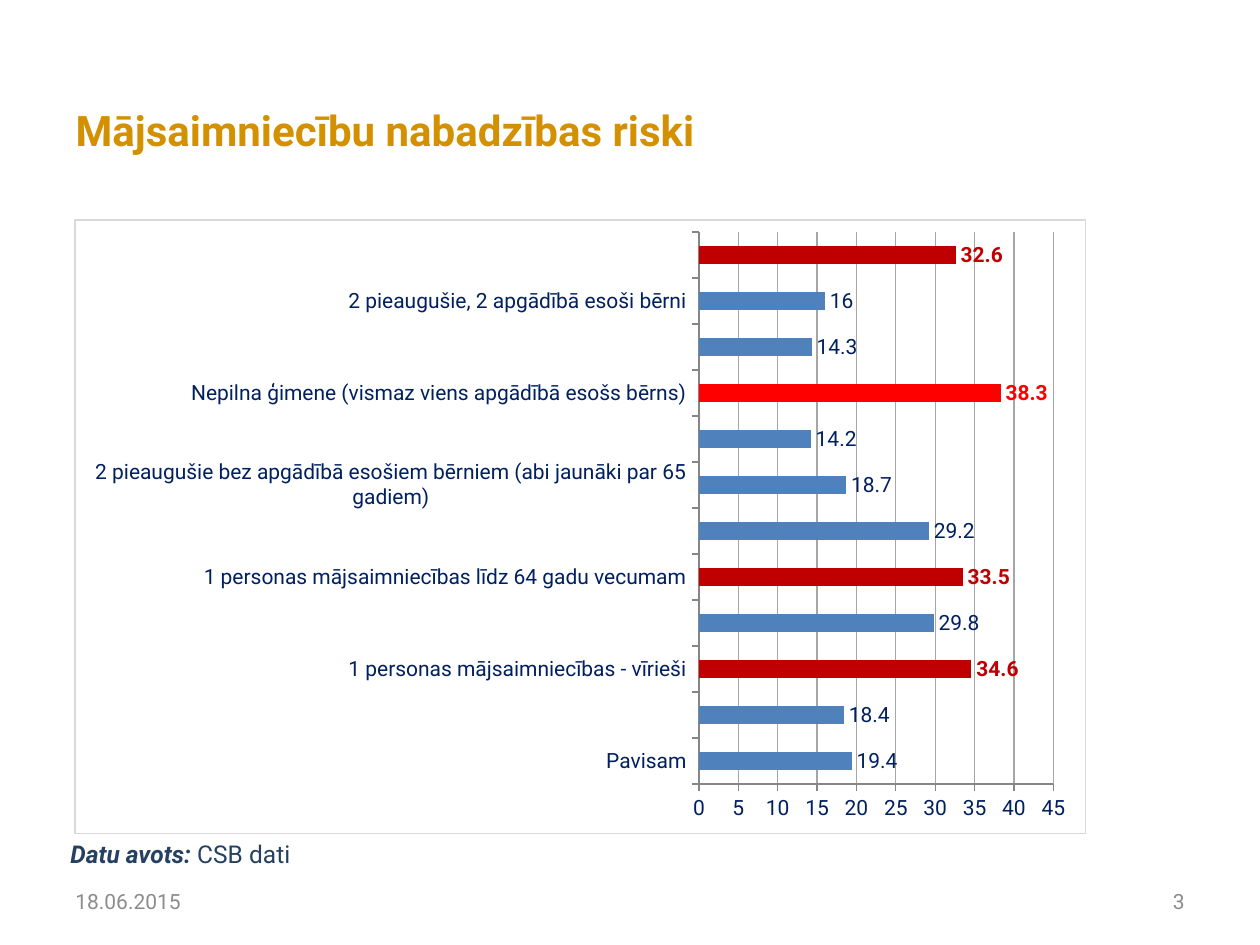
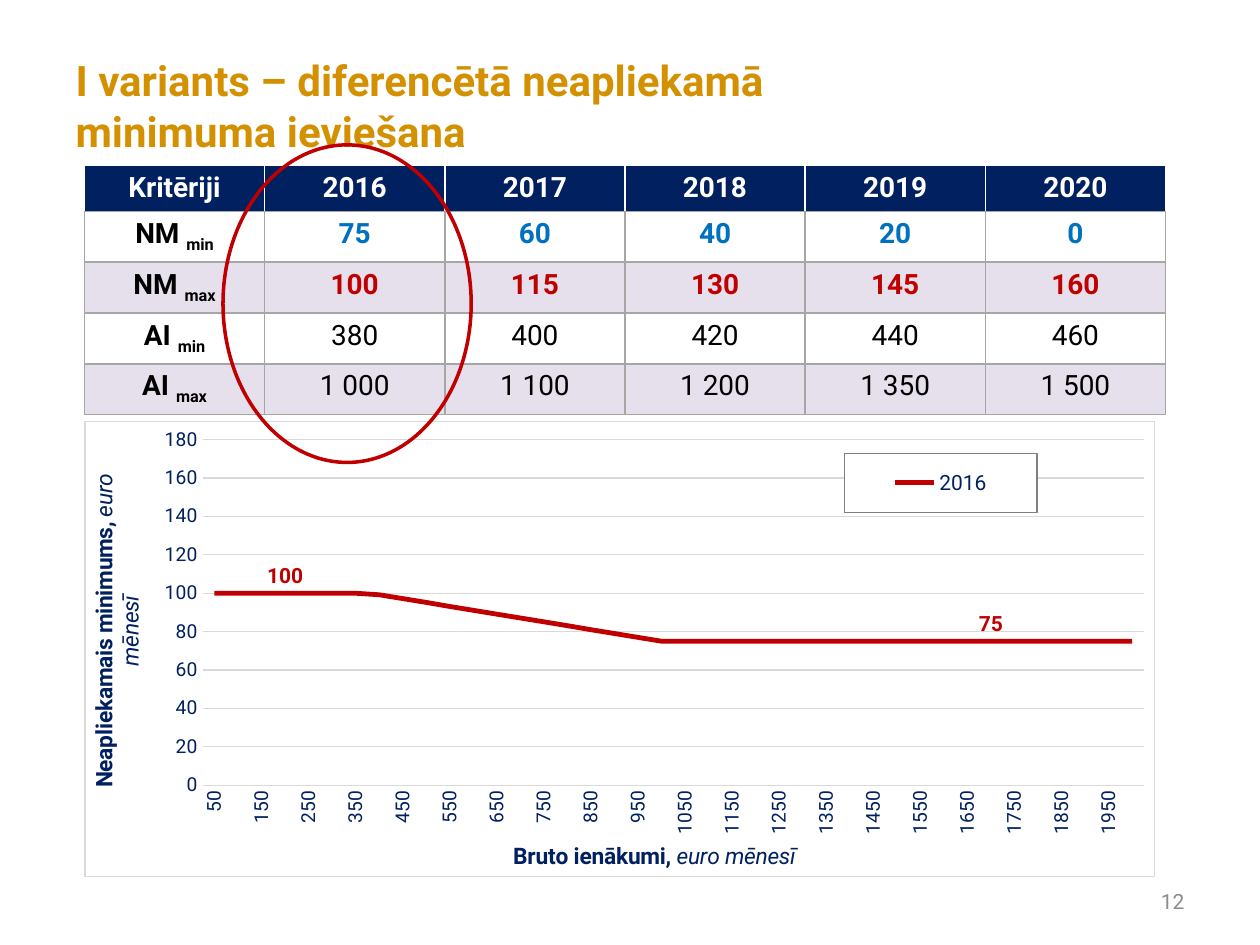
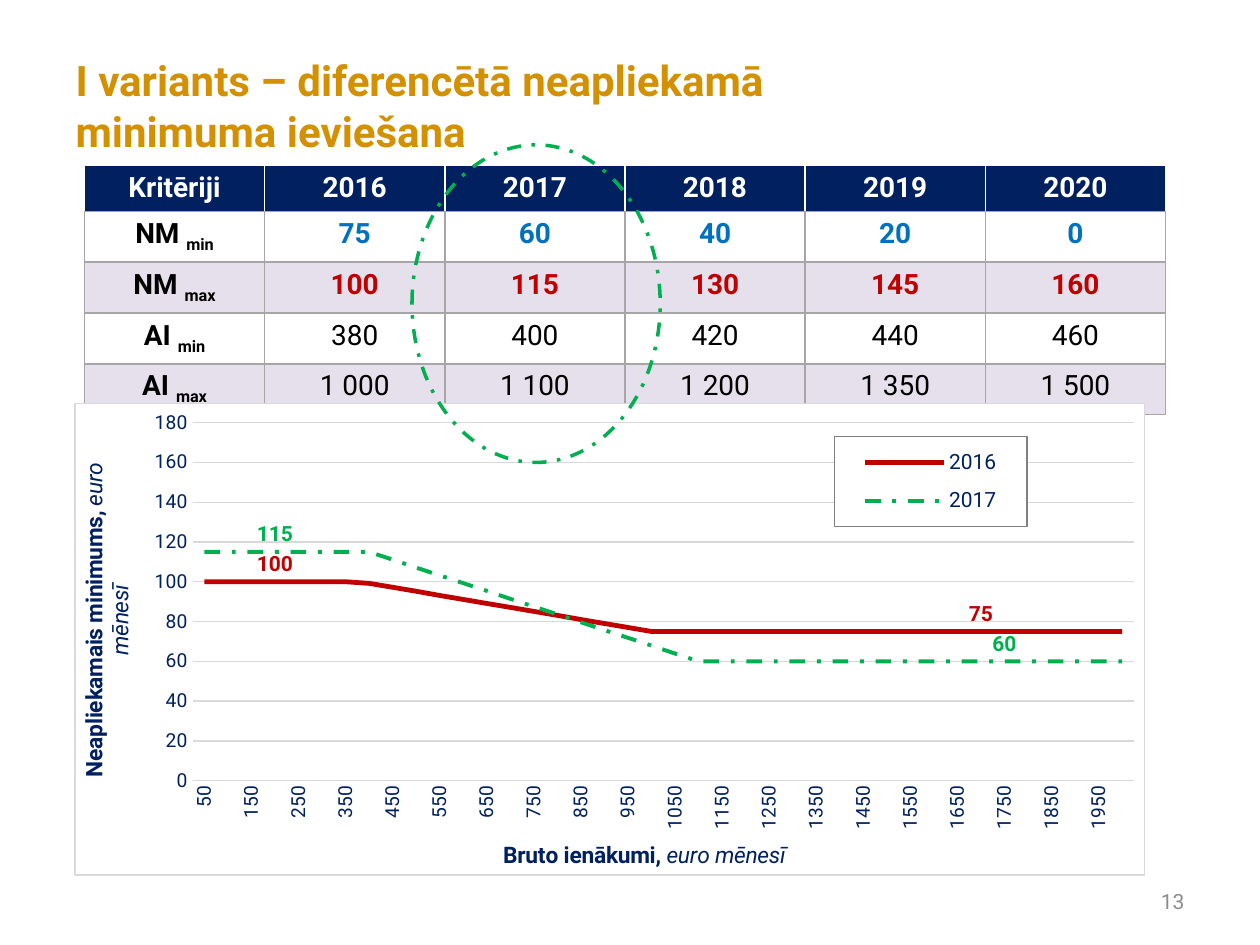
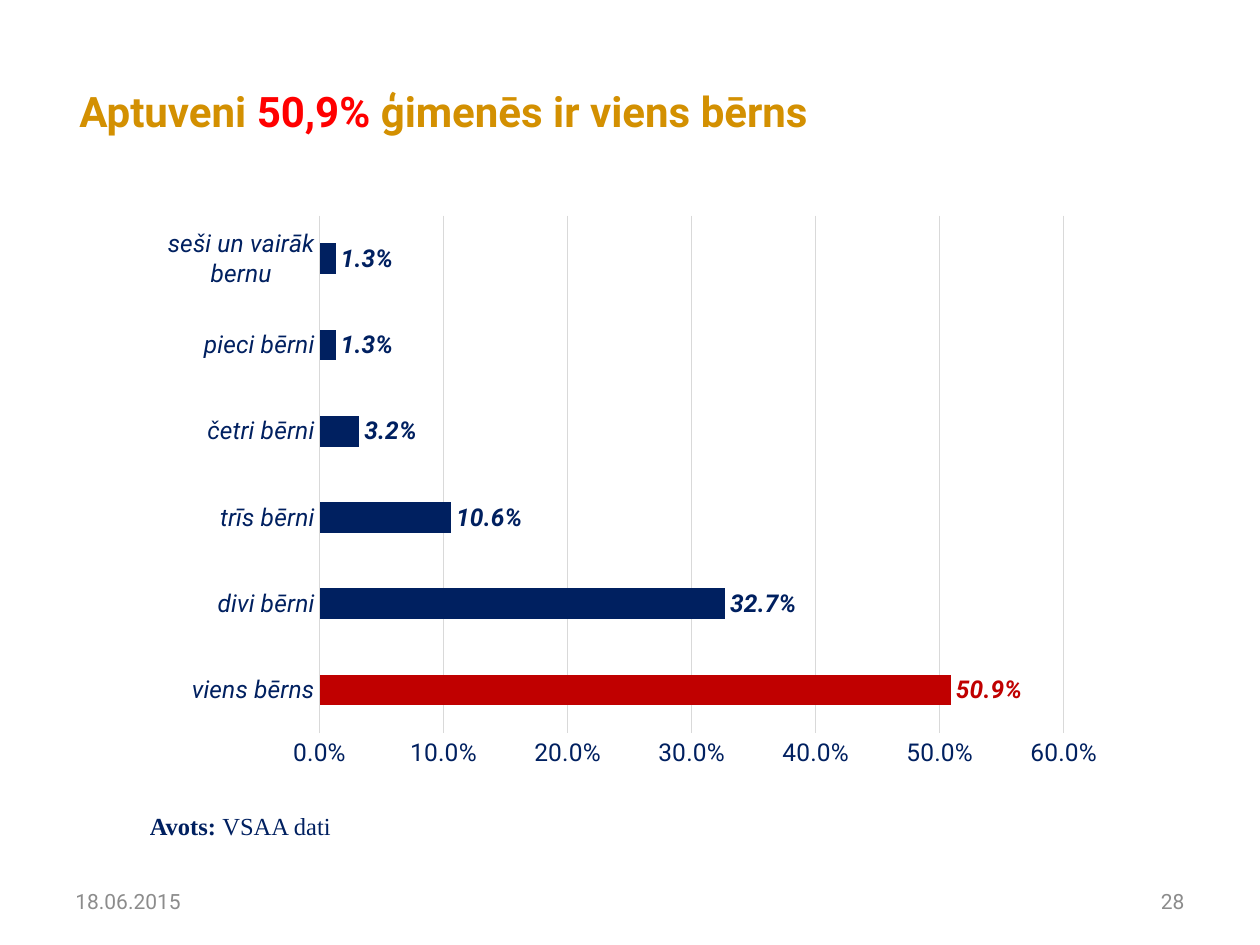
from dataclasses import dataclass, field
from typing import NamedTuple, Optional

from pptx import Presentation
from pptx.chart.data import CategoryChartData as ChartData
from pptx.dml.color import RGBColor
from pptx.enum.chart import XL_CHART_TYPE as Kind, XL_LABEL_POSITION as LabelAt
from pptx.enum.chart import XL_LEGEND_POSITION as LegendAt, XL_TICK_MARK as Tick
from pptx.enum.dml import MSO_LINE as Dash
from pptx.enum.shapes import MSO_SHAPE as Preset
from pptx.enum.text import MSO_ANCHOR as Anchor, MSO_AUTO_SIZE as AutoSize, PP_ALIGN as Align
from pptx.oxml import parse_xml
from pptx.oxml.ns import nsdecls, qn
from pptx.util import Pt


# Theme: colours, fonts and type sizes
@dataclass(frozen=True)
class Theme:
    font: str = "Roboto"
    serif: str = "Times New Roman"
    white: str = "FFFFFF"
    black: str = "000000"
    navy: str = "002060"
    gold: str = "D39001"
    red: str = "C00000"
    bright_red: str = "FF0000"
    green: str = "00B050"
    blue: str = "0070C0"
    bar_blue: str = "4F81BD"
    slate: str = "254061"
    lilac: str = "E6E0EC"
    footer_grey: str = "8C8C8C"
    axis_grey: str = "868686"
    rule_grey: str = "A6A6A6"
    grid_grey: str = "D9D9D9"
    legend_grey: str = "7F7F7F"
    title_size: float = 24
    table_size: float = 16
    source_size: float = 14
    axis_title_size: float = 13
    body_size: float = 12
    tick_size: float = 11


T = Theme()
HAIRLINE = 0.75


class Box(NamedTuple):
    left: float
    top: float
    width: float
    height: float

    def lengths(self) -> tuple:
        return tuple(Pt(value) for value in self)


class Part(NamedTuple):
    """A stretch of text and the format that sets it apart."""
    text: str
    style: dict


class Criterion(NamedTuple):
    name: str
    limit: str
    values: tuple
    color: str
    bold: bool


class Allowance(NamedTuple):
    """One year's rule: the allowance falls from top to bottom between two incomes."""
    year: str
    bottom: float
    top: float
    income_from: float
    income_to: float
    color: str
    width: float
    dash: Optional[Dash]
    labelled: tuple

    def at(self, income: float) -> float:
        share = (income - self.income_from) / (self.income_to - self.income_from)
        return round(self.top - (self.top - self.bottom) * min(max(share, 0), 1), 1)


@dataclass(frozen=True)
class BarChart:
    box: Box
    rows: tuple
    color: str
    highlights: dict
    gap: int
    size: float
    maximum: float
    unit: float
    number_format: str
    grid: str
    tick: Tick
    axis_line: str
    value_line: Optional[str] = None
    border: Optional[str] = None
    italic: bool = False
    label_style: dict = field(default_factory=dict)


# Text
def style_font(font, *, size=T.body_size, color=T.navy, bold=False, italic=False, name=T.font) -> None:
    font.name, font.size = name, Pt(size)
    font.bold, font.italic = bold, italic
    font.color.rgb = RGBColor.from_string(color)


def write(paragraph, text: str, *, align=None, baseline: int = 0, **style) -> None:
    run = paragraph.add_run()
    run.text = text
    style_font(run.font, **style)
    if baseline:
        run.font._element.set("baseline", str(baseline * 1000))
    if align is not None:
        paragraph.alignment = align


def add_text(slide, box: Box, *parts: Part, anchor=Anchor.TOP, wrap=True, align=None):
    frame = slide.shapes.add_textbox(*box.lengths()).text_frame
    frame.word_wrap, frame.vertical_anchor = wrap, anchor
    for text, style in parts:
        write(frame.paragraphs[0], text, align=align, **style)
    return frame.paragraphs[0]


# Slide furniture
def new_slide(deck, title_box: Box, number: int, *title: Part, date: str = ""):
    slide = deck.slides.add_slide(deck.slide_layouts[5])
    heading = slide.shapes.title
    heading.left, heading.top, heading.width, heading.height = title_box.lengths()
    heading.fill.solid()
    heading.fill.fore_color.rgb = RGBColor.from_string(T.white)
    frame = heading.text_frame
    frame.auto_size, frame.word_wrap, frame.vertical_anchor = AutoSize.NONE, True, Anchor.MIDDLE
    for text, style in title:
        write(frame.paragraphs[0], text, align=Align.LEFT,
              **{"size": T.title_size, "color": T.gold, "bold": True, **style})
    for left, text, align in ((36, date, Align.LEFT), (516.24, str(number), Align.RIGHT)):
        if text:
            add_text(slide, Box(left, 500.4, 167.76, 28.8), Part(text, {"color": T.footer_grey}),
                     anchor=Anchor.MIDDLE, align=align)
    return slide


# Chart helpers
def outline_xml(fill: Optional[str], border: Optional[str]):
    def paint(color: Optional[str]) -> str:
        return f'<a:solidFill><a:srgbClr val="{color}"/></a:solidFill>' if color else "<a:noFill/>"

    return parse_xml(f'<c:spPr {nsdecls("c", "a")}>{paint(fill)}'
                     f'<a:ln w="{Pt(HAIRLINE)}">{paint(border)}</a:ln></c:spPr>')


def layout_xml(x: float, y: float, w: float, h: float, inner: bool = False):
    target = '<c:layoutTarget val="inner"/>' if inner else ""
    sizes = "".join(f'<c:{key} val="{value}"/>' for key, value in zip("xywh", (x, y, w, h)))
    return parse_xml(f'<c:layout {nsdecls("c")}><c:manualLayout>{target}<c:xMode val="edge"/>'
                     f'<c:yMode val="edge"/>{sizes}</c:manualLayout></c:layout>')


def drop_layout(element) -> None:
    for old in element.findall(qn("c:layout")):
        element.remove(old)


def add_chart(slide, kind, box: Box, data: ChartData, fill, border):
    chart = slide.shapes.add_chart(kind, *box.lengths(), data).chart
    chart.has_title = chart.has_legend = False
    style_font(chart.font)
    chart.plots[0].vary_by_categories = False
    chart.element.find(qn("c:chart")).addnext(outline_xml(fill, border))
    return chart


def color_line(line, color: Optional[str], width: float = HAIRLINE) -> None:
    if color is None:
        line.fill.background()
    else:
        line.color.rgb = RGBColor.from_string(color)
        line.width = Pt(width)


def style_axis(axis, *, line, tick, grid=None, maximum=None, unit=None, number_format=None, **style) -> None:
    axis.major_tick_mark, axis.minor_tick_mark = tick, Tick.NONE
    style_font(axis.tick_labels.font, **style)
    color_line(axis.format.line, line)
    axis.has_major_gridlines = grid is not None
    if grid:
        color_line(axis.major_gridlines.format.line, grid)
        axis.minimum_scale, axis.maximum_scale, axis.major_unit = 0, maximum, unit
        axis.tick_labels.number_format = number_format
        axis.tick_labels.number_format_is_linked = False


def label_point(point, position, **style) -> None:
    style_font(point.data_label.font, **style)
    point.data_label.position = position


def fill_bar(target, color: str) -> None:
    target.format.fill.solid()
    target.format.fill.fore_color.rgb = RGBColor.from_string(color)


# Bar charts
def draw_bars(slide, bars: BarChart) -> None:
    data = ChartData(number_format=bars.number_format)
    data.categories = [name for name, _ in bars.rows]
    data.add_series("Series 1", [value for _, value in bars.rows])
    chart = add_chart(slide, Kind.BAR_CLUSTERED, bars.box, data, None, bars.border)
    chart.plots[0].gap_width = bars.gap
    style_axis(chart.category_axis, line=bars.axis_line, tick=bars.tick, size=bars.size, italic=bars.italic)
    style_axis(chart.value_axis, line=bars.value_line, tick=bars.tick, grid=bars.grid, size=bars.size,
               maximum=bars.maximum, unit=bars.unit, number_format=bars.number_format)
    series = chart.plots[0].series[0]
    series.invert_if_negative = False
    fill_bar(series, bars.color)
    labels = series.data_labels
    labels.show_value, labels.position = True, LabelAt.OUTSIDE_END
    labels.number_format, labels.number_format_is_linked = bars.number_format, False
    style_font(labels.font, size=bars.size, **bars.label_style)
    for index, color in bars.highlights.items():
        fill_bar(series.points[index], color)
        label_point(series.points[index], LabelAt.OUTSIDE_END,
                    **{"size": bars.size, **bars.label_style, "color": color, "bold": True})


# Allowance table
YEARS = ("2016", "2017", "2018", "2019", "2020")
CRITERIA = (
    Criterion("NM ", "min", ("75", "60", "40", "20", "0"), T.blue, True),
    Criterion("NM ", "max", ("100", "115", "130", "145", "160"), T.red, True),
    Criterion("AI ", "min", ("380", "400", "420", "440", "460"), T.black, False),
    Criterion("AI ", "max", ("1 000", "1 100", "1 200", "1 350", "1 500"), T.black, False),
)


def fill_cell(cell, fill: str, edges: dict, *parts: Part) -> None:
    for text, style in parts:
        write(cell.text_frame.paragraphs[0], text, align=Align.CENTER, size=T.table_size, **style)
    properties = cell._tc.get_or_add_tcPr()
    for side, color in edges.items():
        properties.append(parse_xml(
            f'<a:ln{side} {nsdecls("a")} w="{Pt(1)}"><a:solidFill><a:srgbClr val="{color}"/>'
            f'</a:solidFill></a:ln{side}>'))
    cell.fill.solid()
    cell.fill.fore_color.rgb = RGBColor.from_string(fill)


def draw_criteria(slide) -> None:
    rows, columns = len(CRITERIA) + 1, len(YEARS) + 1
    box = Box(48.24, 94.32, 102.96 * columns, 25.92 * rows)
    table = slide.shapes.add_table(rows, columns, *box.lengths()).table
    table.first_row = table.horz_banding = False
    grey = dict.fromkeys("LRTB", T.rule_grey)
    header = {**dict.fromkeys("LRT", T.white), "B": T.rule_grey}
    for column, text in enumerate(("Kritēriji", *YEARS)):
        fill_cell(table.cell(0, column), T.navy, header, Part(text, {"color": T.white, "bold": True}))
    for row, criterion in enumerate(CRITERIA, 1):
        fill = T.white if row % 2 else T.lilac
        name_style = {"color": T.black, "bold": True}
        fill_cell(table.cell(row, 0), fill, grey, Part(criterion.name, name_style),
                  Part(criterion.limit, {**name_style, "baseline": -25}))
        for column, value in enumerate(criterion.values, 1):
            fill_cell(table.cell(row, column), fill, grey,
                      Part(value, {"color": criterion.color, "bold": criterion.bold}))


# Allowance line chart
INCOMES = range(50, 2001, 50)
ALLOWANCES = (
    Allowance("2016", 75, 100, 380, 1000, T.red, 2.75, None, (3, 33)),
    Allowance("2017", 60, 115, 400, 1100, T.green, 2.25, Dash.DASH_DOT, (3, 34)),
)


def title_axis(axis, name: str, unit: str, rotation: int) -> None:
    frame = axis.axis_title.text_frame
    frame._txBody.find(qn("a:bodyPr")).set("rot", str(rotation * 60000))
    write(frame.paragraphs[0], name, size=T.axis_title_size, bold=True)
    write(frame.paragraphs[0], unit, size=T.axis_title_size, italic=True)


def draw_legend(chart, height: float) -> None:
    chart.has_legend = True
    legend = chart.legend
    legend.position, legend.include_in_layout = LegendAt.BOTTOM, False
    style_font(legend.font)
    element = legend._element
    drop_layout(element)
    element.find(qn("c:legendPos")).addnext(layout_xml(0.71, 0.07, 0.18, height))
    element.find(qn("c:overlay")).addnext(outline_xml(T.white, T.legend_grey))


def draw_allowances(slide, box: Box, allowances: tuple, legend_height: float) -> None:
    data = ChartData(number_format="0")
    data.categories = [str(income) for income in INCOMES]
    for allowance in allowances:
        data.add_series(allowance.year, [allowance.at(income) for income in INCOMES])
    chart = add_chart(slide, Kind.LINE, box, data, T.white, T.grid_grey)
    plot_area = chart.element.find(qn("c:chart")).find(qn("c:plotArea"))
    drop_layout(plot_area)
    plot_area.insert(0, layout_xml(0.11, 0.04, 0.88, 0.76, inner=True))
    style_axis(chart.category_axis, line=T.grid_grey, tick=Tick.NONE, size=T.tick_size)
    style_axis(chart.value_axis, line=None, tick=Tick.NONE, grid=T.grid_grey, size=T.tick_size,
               maximum=180, unit=20, number_format="0")
    tick_text = chart.category_axis._element.find(qn("c:txPr"))
    tick_text.find(qn("a:bodyPr")).set("rot", str(-90 * 60000))
    title_axis(chart.category_axis, "Bruto ienākumi,", " euro mēnesī", 0)
    title_axis(chart.value_axis, "Neapliekamais minimums,", " euro mēnesī", -90)
    draw_legend(chart, legend_height)
    for series, allowance in zip(chart.plots[0].series, allowances):
        series.smooth = False
        color_line(series.format.line, allowance.color, allowance.width)
        if allowance.dash:
            series.format.line.dash_style = allowance.dash
        series.data_labels.show_value = False
        for index in allowance.labelled:
            label_point(series.points[index], LabelAt.ABOVE, color=allowance.color, bold=True)


def draw_variant(deck, number: int, chart_box: Box, allowances: tuple, legend_height: float) -> None:
    slide = new_slide(deck, Box(36, 37.44, 479.52, 45.36), number,
                      Part("I variants – diferencētā neapliekamā minimuma ieviešana", {}))
    draw_criteria(slide)
    draw_allowances(slide, chart_box, allowances, legend_height)
    # Ring around the newest year's column
    newest = allowances[-1]
    ring_box = Box(127.44 + 108 * (len(allowances) - 1), 82.8, 141.84, 181.44)
    ring = slide.shapes.add_shape(Preset.OVAL, *ring_box.lengths())
    ring.shadow.inherit = False
    ring.fill.background()
    color_line(ring.line, newest.color, 2)
    if newest.dash:
        ring.line.dash_style = newest.dash


# Slide contents
DATE = "18.06.2015"
POVERTY = BarChart(
    box=Box(42.48, 125.28, 578.16, 351.36),
    rows=(
        ("Pavisam", 19.4),
        ("Visas mājsaimniecības bez apgādībā esošiem bērniem", 18.4),
        ("1 personas mājsaimniecības - vīrieši", 34.6),
        ("1 personas mājsaimniecības - sievietes", 29.8),
        ("1 personas mājsaimniecības līdz 64 gadu vecumam", 33.5),
        ("1 personas mājsaimniecības 65 gadi un vecākas", 29.2),
        ("2 pieaugušie bez apgādībā esošiem bērniem (abi jaunāki par 65 gadiem)", 18.7),
        ("2 pieaugušie bez apgādībā esošiem bērniem (vismaz viens 65 gadi un vecāks)", 14.2),
        ("Nepilna ģimene (vismaz viens apgādībā esošs bērns)", 38.3),
        ("2 pieaugušie, 1 apgādībā esošs bērns", 14.3),
        ("2 pieaugušie, 2 apgādībā esoši bērni", 16),
        ("2 pieaugušie, 3 un vairāk apgādībā esoši bērni", 32.6),
    ),
    color=T.bar_blue, highlights={2: T.red, 4: T.red, 8: T.bright_red, 11: T.red},
    gap=150, size=T.body_size, maximum=45, unit=5, number_format="General",
    grid=T.rule_grey, tick=Tick.OUTSIDE, axis_line=T.axis_grey, value_line=T.axis_grey,
    border=T.grid_grey,
)
CHILDREN = BarChart(
    box=Box(93.6, 116.64, 544.32, 329.04),
    rows=(("viens bērns", 0.509), ("divi bērni", 0.327), ("trīs bērni", 0.106),
          ("četri bērni", 0.032), ("pieci bērni", 0.013), ("seši un vairāk bernu", 0.013)),
    color=T.navy, highlights={0: T.red}, gap=182, size=T.source_size,
    maximum=0.6, unit=0.1, number_format="0.0%", grid=T.grid_grey, tick=Tick.NONE,
    axis_line=T.grid_grey, italic=True, label_style={"bold": True, "italic": True},
)


def draw_poverty(deck) -> None:
    slide = new_slide(deck, Box(36, 37.44, 488.16, 73.44), 3,
                      Part("Mājsaimniecību nabadzības riski", {}), date=DATE)
    source = {"size": T.source_size, "color": T.slate}
    add_text(slide, Box(33.12, 475.92, 566.64, 24.48),
             Part("Datu avots: ", {**source, "bold": True, "italic": True}), Part("CSB dati", source))
    draw_bars(slide, POVERTY)


def draw_children(deck) -> None:
    slide = new_slide(deck, Box(38.16, 37.44, 463.68, 51.12), 28, Part("Aptuveni ", {}),
                      Part("50,9%", {"color": T.bright_red}), Part(" ģimenēs ir viens bērns", {}), date=DATE)
    draw_bars(slide, CHILDREN)
    source = {"size": T.source_size, "name": T.serif}
    paragraph = add_text(slide, Box(42.48, 457.2, 154.8, 26.64), Part("Avots: ", {**source, "bold": True}),
                         Part("VSAA dati", source), wrap=False, align=Align.JUSTIFY)
    paragraph.line_spacing, paragraph.space_after = 1.15, Pt(6)
    paragraph._p.get_or_add_pPr().set("marL", str(Pt(36)))


def main() -> None:
    deck = Presentation()
    deck.slide_width, deck.slide_height = Pt(720), Pt(540)
    draw_poverty(deck)
    draw_variant(deck, 12, Box(48.24, 240.48, 612, 260.64), ALLOWANCES[:1], 0.13)
    draw_variant(deck, 13, Box(42.48, 230.4, 612, 270), ALLOWANCES, 0.19)
    draw_children(deck)
    deck.save("out.pptx")


if __name__ == "__main__":
    main()
